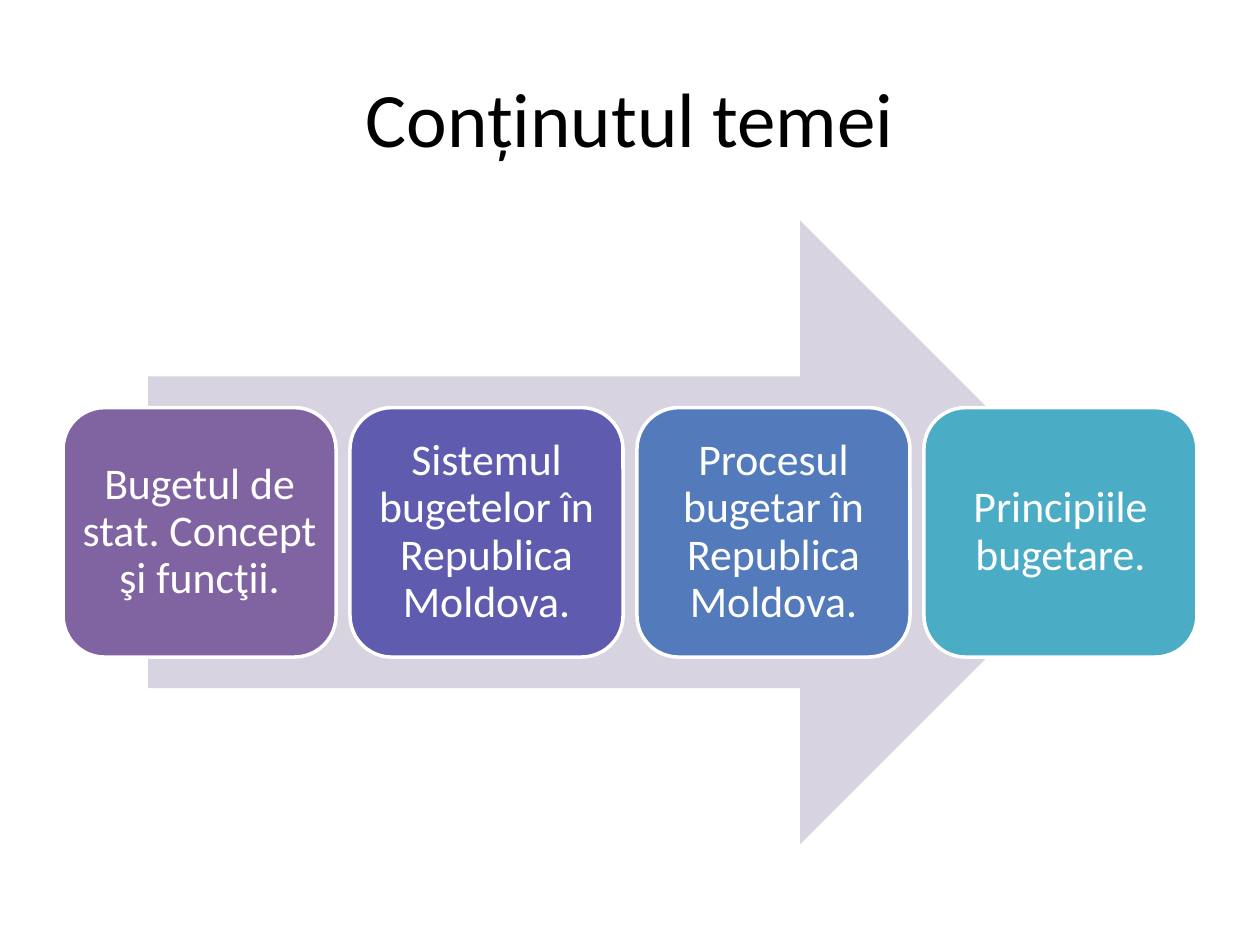
import dataclasses

import pptx
import pptx.dml.color
import pptx.enum.shapes
import pptx.enum.text
import pptx.util

SHAPES = pptx.enum.shapes.MSO_SHAPE


@dataclasses.dataclass(frozen=True)
class Theme:
    font: str = "Calibri"
    title_size: int = 44
    topic_size: int = 25
    ink: str = "000000"
    paper: str = "FFFFFF"
    arrow: str = "D8D3E0"
    topics: tuple = ("8064A2", "5F5BAE", "537ABA", "4BACC6")
    border: float = 2


@dataclasses.dataclass(frozen=True)
class Area:
    """A rectangle in inches."""
    left: float
    top: float
    width: float
    height: float

    def centred(self, across, down):
        """The middle part, given as shares of the width and height."""
        width, height = self.width * across, self.height * down
        return Area(self.left + (self.width - width) / 2,
                    self.top + (self.height - height) / 2, width, height)

    def column(self, index, count, gap):
        width = (self.width - gap * (count - 1)) / count
        return Area(self.left + index * (width + gap), self.top, width, self.height)

    def emu(self):
        return [pptx.util.Inches(v) for v in dataclasses.astuple(self)]


def rgb(value):
    return pptx.dml.color.RGBColor.from_string(value)


def assign(target, formats):
    for name, value in formats.items():
        setattr(target, name, value)


class SlideBuilder:
    def __init__(self, slide, theme):
        self.slide = slide
        self.theme = theme
        self.diagram = slide.shapes.add_group_shape()

    def set_text(self, frame, text, size, color, inset, spacing):
        frame.text = text
        assign(frame, {
            "word_wrap": True,
            "auto_size": pptx.enum.text.MSO_AUTO_SIZE.NONE,
            "vertical_anchor": pptx.enum.text.MSO_ANCHOR.MIDDLE,
            **{f"margin_{side}": pptx.util.Inches(inset)
               for side in ("left", "top", "right", "bottom")},
        })
        paragraph = frame.paragraphs[0]
        assign(paragraph, {"alignment": pptx.enum.text.PP_ALIGN.CENTER,
                           "line_spacing": spacing})
        font = paragraph.runs[0].font
        assign(font, {"name": self.theme.font, "size": pptx.util.Pt(size)})
        font.color.rgb = rgb(color)

    def title(self, text, area):
        heading = self.slide.shapes.title
        assign(heading, dict(zip(("left", "top", "width", "height"), area.emu())))
        self.set_text(heading.text_frame, text, self.theme.title_size,
                      self.theme.ink, 0.1, 1.0)

    def block(self, kind, area, color):
        block = self.diagram.shapes.add_shape(kind, *area.emu())
        block.shadow.inherit = False
        block.fill.solid()
        block.fill.fore_color.rgb = rgb(color)
        return block

    def arrow(self, area):
        self.block(SHAPES.RIGHT_ARROW, area, self.theme.arrow).line.fill.background()

    def topic(self, text, area, color):
        card = self.block(SHAPES.ROUNDED_RECTANGLE, area, color)
        card.line.color.rgb = rgb(self.theme.paper)
        card.line.width = pptx.util.Pt(self.theme.border)
        # The rounded corners already inset the text
        self.set_text(card.text_frame, text, self.theme.topic_size,
                      self.theme.paper, 0, 0.9)


def main():
    deck = pptx.Presentation()
    assign(deck, {"slide_width": pptx.util.Inches(10),
                  "slide_height": pptx.util.Inches(7.5)})
    theme = Theme()
    builder = SlideBuilder(deck.slides.add_slide(deck.slide_layouts[5]), theme)

    # Title
    builder.title("Conținutul temei", Area(0.5, 0.3, 9, 1.25))

    # Arrow behind the topics
    content = Area(0.5, 1.75, 9, 4.95)
    builder.arrow(content.centred(0.85, 1))

    # Row of topics
    topics = (
        "Bugetul de stat. Concept şi funcţii.",
        "Sistemul bugetelor în Republica Moldova.",
        "Procesul bugetar în Republica Moldova.",
        "Principiile bugetare.",
    )
    row = content.centred(1, 0.4)
    for index, (topic, color) in enumerate(zip(topics, theme.topics)):
        builder.topic(topic, row.column(index, len(topics), 0.11), color)

    deck.save("out.pptx")


if __name__ == "__main__":
    main()
